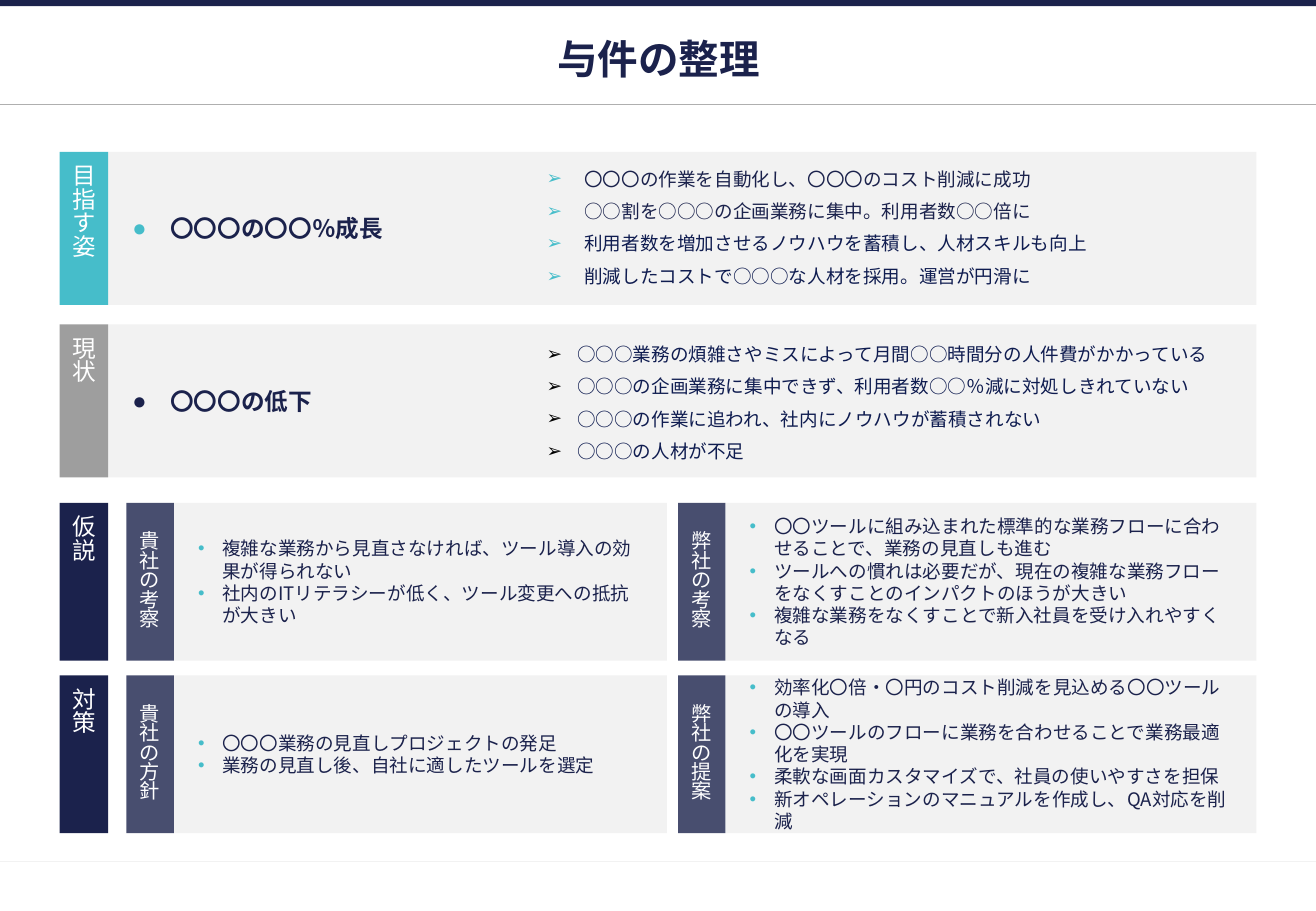
from pptx import Presentation
from pptx.dml.color import RGBColor
from pptx.enum.shapes import MSO_CONNECTOR, MSO_SHAPE
from pptx.enum.text import MSO_ANCHOR, PP_ALIGN
from pptx.oxml.ns import qn
from pptx.util import Inches, Pt
from lxml.etree import SubElement

FONT = "Noto Sans CJK JP"
NAVY, INK, TEAL, GRAY, PANEL = "1B224C", "0F1C50", "46BDCA", "9E9E9E", "F2F2F2"
WHITE, BLACK, RULE = "FFFFFF", "000000", "AFAFAF"

TITLE = "与件の整理"
STATES = [
    dict(label="目指す姿", color=TEAL, top=1.25, headline="〇〇〇の〇〇％成長", bullet=TEAL,
         details_top=1.33, details=[
             ("〇〇〇の作業を自動化し、〇〇〇のコスト削減に成功", NAVY),
             ("○○割を○○○の企画業務に集中。利用者数○○倍に", NAVY),
             ("利用者数を増加させるノウハウを蓄積し、人材スキルも向上", INK),
             ("削減したコストで○○○な人材を採用。運営が円滑に", INK)],
         details_format=dict(bullet_color=TEAL, indent=0.31, gap=dict(space_before=Pt(6)))),
    dict(label="現状", color=GRAY, top=2.67, headline="〇〇〇の低下", bullet=NAVY,
         details_top=2.74, details=[
             ("○○○業務の煩雑さやミスによって月間○○時間分の人件費がかかっている", INK),
             ("○○○の企画業務に集中できず、利用者数○○％減に対処しきれていない", INK),
             ("○○○の作業に追われ、社内にノウハウが蓄積されない", INK),
             ("○○○の人材が不足", INK)],
         details_format=dict(bullet_color=BLACK, indent=0.25,
                             gap=dict(line_spacing=1.2, space_after=Pt(3.2)))),
]
PLANS = [
    ("仮説", 4.14, [
        ("貴社の考察", ["複雑な業務から見直さなければ、ツール導入の効果が得られない",
                   "社内のITリテラシーが低く、ツール変更への抵抗が大きい"]),
        ("弊社の考察", ["〇〇ツールに組み込まれた標準的な業務フローに合わせることで、業務の見直しも進む",
                   "ツールへの慣れは必要だが、現在の複雑な業務フローをなくすことのインパクトのほうが大きい",
                   "複雑な業務をなくすことで新入社員を受け入れやすくなる"])]),
    ("対策", 5.56, [
        ("貴社の方針", ["〇〇〇業務の見直しプロジェクトの発足",
                   "業務の見直し後、自社に適したツールを選定"]),
        ("弊社の提案", ["効率化〇倍・〇円のコスト削減を見込める〇〇ツールの導入",
                   "〇〇ツールのフローに業務を合わせることで業務最適化を実現",
                   "柔軟な画面カスタマイズで、社員の使いやすさを担保",
                   "新オペレーションのマニュアルを作成し、QA対応を削減"])]),
]
PAGE_W, PAGE_H = 10.83, 7.5
LABEL_X, LABEL_W = 0.49, 0.4
STATE_H, PLAN_H = 1.26, 1.3
COLUMNS = [(1.04, 4.06), (5.58, 4.37)]  # left edge of the side label, width of its panel
SIDE_W = 0.39
PANEL_INSETS, LABEL_INSETS = (0.2, 0.12, 0.2, 0.12), (0.1, 0.05, 0.1, 0.05)


def rgb(color):
    return RGBColor.from_string(color)


def set_format(target, **values):
    for name, value in values.items():
        setattr(target, name, value)


def set_insets(frame, insets):
    for side, inset in zip(("left", "top", "right", "bottom"), insets):
        setattr(frame, f"margin_{side}", Inches(inset))


def add_bullet(paragraph, char, color, indent):
    props = paragraph._p.get_or_add_pPr()
    props.set("marL", str(Inches(indent)))
    props.set("indent", str(-Inches(indent)))
    SubElement(SubElement(props, qn("a:buClr")), qn("a:srgbClr"), val=color)
    SubElement(props, qn("a:buFont"), typeface="Arial")
    SubElement(props, qn("a:buChar"), char=char)


def write(paragraph, text, size, color, bold=False):
    run = paragraph.add_run()
    run.text = text
    set_format(run.font, name=FONT, size=Pt(size), bold=bold)
    run.font.color.rgb = rgb(color)
    SubElement(run.font._element, qn("a:ea"), typeface=FONT)


def write_list(frame, items, char, bullet_color, indent, size=11, bold=False, gap=None):
    """Write (text, colour) items as bulleted paragraphs."""
    for i, (text, color) in enumerate(items):
        paragraph = frame.add_paragraph() if i else frame.paragraphs[0]
        add_bullet(paragraph, char, bullet_color, indent)
        for name, value in (gap or {}).items():
            if i or name != "space_before":
                setattr(paragraph, name, value)
        write(paragraph, text, size, color, bold)


def add_block(x, y, w, h, color, insets=PANEL_INSETS):
    """Add a plain rectangle and return it."""
    block = slide.shapes.add_shape(MSO_SHAPE.RECTANGLE, *map(Inches, (x, y, w, h)))
    block.shadow.inherit = False
    block.fill.solid()
    block.fill.fore_color.rgb = rgb(color)
    block.line.fill.background()
    set_format(block.text_frame, word_wrap=True, vertical_anchor=MSO_ANCHOR.MIDDLE)
    set_insets(block.text_frame, insets)
    block.text_frame.paragraphs[0].alignment = PP_ALIGN.LEFT
    return block


def add_row_label(text, y, h, color):
    frame = add_block(LABEL_X, y, LABEL_W, h, color, LABEL_INSETS).text_frame
    frame._txBody.bodyPr.set("vert", "eaVert")
    frame.paragraphs[0].alignment = PP_ALIGN.CENTER
    write(frame.paragraphs[0], text, 14, WHITE)


def add_side_label(text, x, y):
    label = add_block(x, y, SIDE_W, PLAN_H, NAVY, LABEL_INSETS)
    fill_color = label._element.spPr.find(qn("a:solidFill"))[0]
    SubElement(fill_color, qn("a:alpha"), val="80000")
    paragraph = label.text_frame.paragraphs[0]
    set_format(paragraph, alignment=PP_ALIGN.CENTER, line_spacing=0.8)
    write(paragraph, text, 12, WHITE)


def add_rule(y, color):
    rule = slide.shapes.add_connector(
        MSO_CONNECTOR.STRAIGHT, 0, Inches(y), Inches(PAGE_W), Inches(y))
    rule.line.color.rgb = rgb(color)
    rule.line.width = Pt(0.75)
    SubElement(rule._element.spPr, qn("a:effectLst"))


prs = Presentation()
set_format(prs, slide_width=Inches(PAGE_W), slide_height=Inches(PAGE_H))
slide = prs.slides.add_slide(prs.slide_layouts[5])

add_rule(7.09, PANEL)
add_block(0, 0, PAGE_W, 0.05, NAVY)
add_rule(0.86, RULE)

title = slide.shapes.title
set_format(title, left=Inches(0.5), top=Inches(0.29), width=Inches(9.84), height=Inches(0.39))
set_format(title.text_frame, word_wrap=True, vertical_anchor=MSO_ANCHOR.MIDDLE)
set_insets(title.text_frame, (0.04, 0.04, 0.04, 0.05))
title.text_frame.paragraphs[0].alignment = PP_ALIGN.CENTER
write(title.text_frame.paragraphs[0], TITLE, 24, NAVY, bold=True)

for state in STATES:
    panel = add_block(LABEL_X + LABEL_W, state["top"], 9.45, STATE_H, PANEL)
    write_list(panel.text_frame, [(state["headline"], NAVY)], "●", state["bullet"], 0.31,
               size=14, bold=True)
    add_row_label(state["label"], state["top"], STATE_H, state["color"])
    details = slide.shapes.add_textbox(
        *map(Inches, (4.4, state["details_top"], 5.88, 1.1))).text_frame
    details.word_wrap = True
    write_list(details, state["details"], "➢", **state["details_format"])

for row_label, top, columns in PLANS:
    add_row_label(row_label, top, PLAN_H, NAVY)
    for (x, panel_w), (side_label, points) in zip(COLUMNS, columns):
        panel = add_block(x + SIDE_W, top, panel_w, PLAN_H, PANEL)
        write_list(panel.text_frame, [(point, NAVY) for point in points], "•", TEAL, 0.2)
        add_side_label(side_label, x, top)

prs.save("out.pptx")
